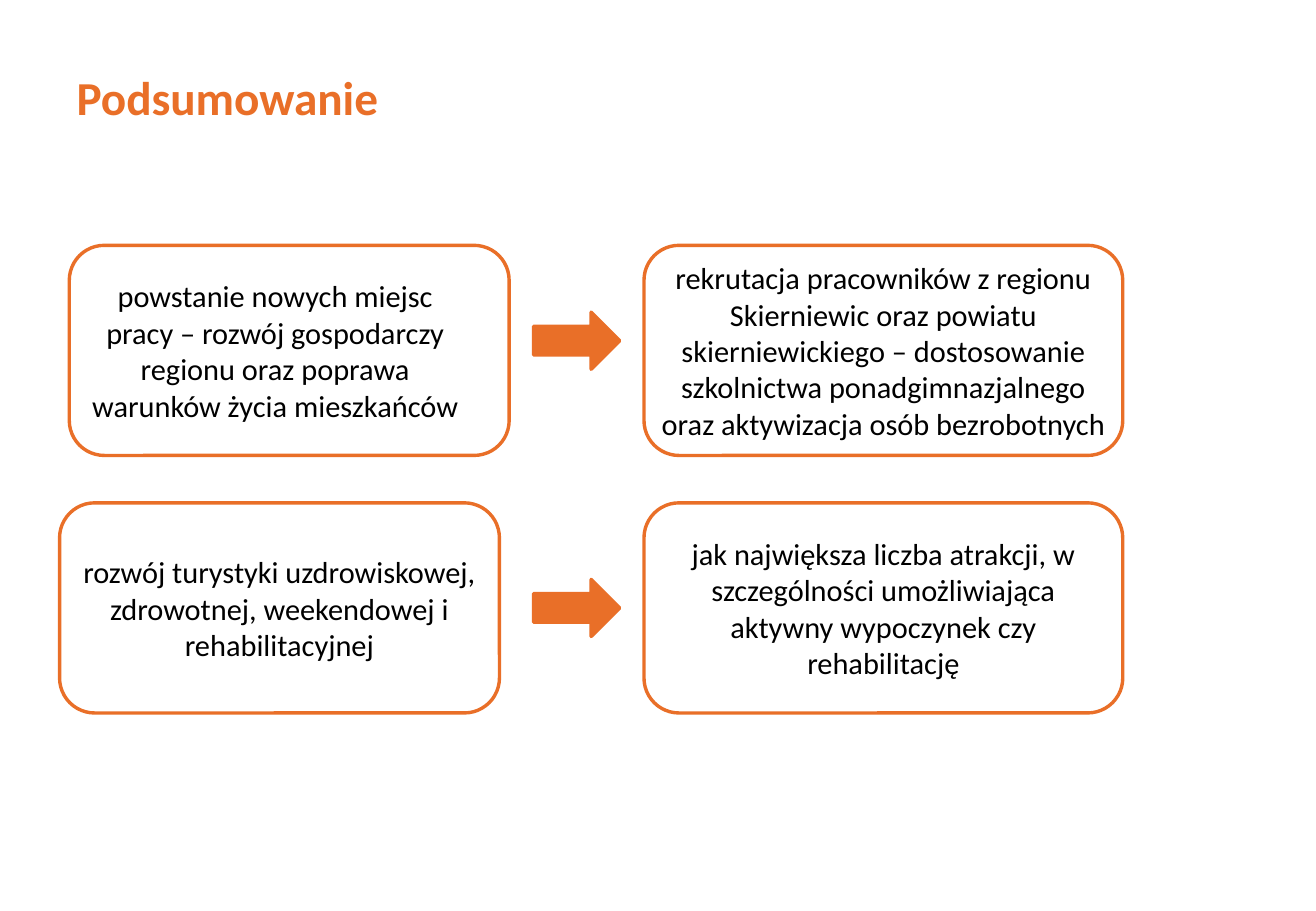
"""Builds the summary slide: two causes, each with an arrow to its effect."""
from pptx import Presentation
from pptx.dml.color import RGBColor
from pptx.enum.shapes import MSO_SHAPE
from pptx.enum.text import MSO_ANCHOR, PP_ALIGN
from pptx.util import Inches, Pt

COLORS = {"accent": "E96F28", "text": "000000"}
TITLE = "Podsumowanie"
FRAME_H = 1.73
EFFECT_FRAME = (5.3, 3.94)
EFFECT_TEXT = (5.34, 3.86)
ARROW = (4.39, 0.71, 0.47)
ROWS = [
    {
        "top": 2.02, "arrow_top": 2.57,
        "cause": ("powstanie nowych miejsc pracy – rozwój gospodarczy regionu "
                  "oraz poprawa warunków życia mieszkańców", 4),
        "cause_frame": (0.57, 3.62), "cause_text": (0.61, 3.31),
        "effect": ("rekrutacja pracowników z regionu Skierniewic oraz powiatu "
                   "skierniewickiego – dostosowanie szkolnictwa ponadgimnazjalnego "
                   "oraz aktywizacja osób bezrobotnych", 5),
    },
    {
        "top": 4.14, "arrow_top": 4.77,
        "cause": ("rozwój turystyki uzdrowiskowej, zdrowotnej, weekendowej "
                  "i rehabilitacyjnej", 3),
        "cause_frame": (0.49, 3.62), "cause_text": (0.53, 3.54),
        "effect": ("jak największa liczba atrakcji, w szczególności umożliwiająca "
                   "aktywny wypoczynek czy rehabilitację", 4),
    },
]
TITLE_FONT = {"name": "Calibri", "size": Pt(28), "bold": True}
BODY_FONT = {"name": "Calibri", "size": Pt(18)}


def color(key):
    return RGBColor.from_string(COLORS[key])


def write(tf, text, fmt, key, align):
    tf.word_wrap = True
    p = tf.paragraphs[0]
    p.alignment = align
    r = p.add_run()
    r.text = text
    for name, value in fmt.items():
        setattr(r.font, name, value)
    r.font.color.rgb = color(key)


def add_outline(s, kind, box, filled=False):
    sp = s.shapes.add_shape(kind, *map(Inches, box))
    sp.shadow.inherit = False
    if filled:
        sp.fill.solid()
        sp.fill.fore_color.rgb = color("accent")
    else:
        sp.fill.background()
    sp.line.color.rgb = color("accent")
    sp.line.width = Pt(2)


def add_statement(s, top, frame, span, statement):
    text, lines = statement
    left, width = frame
    add_outline(s, MSO_SHAPE.ROUNDED_RECTANGLE, (left, top, width, FRAME_H))
    left, width = span
    height = 0.1 + 0.3 * lines
    text_top = top + (FRAME_H - height) / 2
    tb = s.shapes.add_textbox(*map(Inches, (left, text_top, width, height)))
    tb.text_frame.vertical_anchor = MSO_ANCHOR.MIDDLE
    write(tb.text_frame, text, BODY_FONT, "text", PP_ALIGN.CENTER)


def main():
    prs = Presentation()
    prs.slide_width, prs.slide_height = Inches(10.83), Inches(7.5)
    s = prs.slides.add_slide(prs.slide_layouts[5])

    title = s.shapes.title
    title.left, title.top, title.width, title.height = map(Inches, (0.53, 0.36, 9.75, 0.87))
    title.text_frame.vertical_anchor = MSO_ANCHOR.MIDDLE
    write(title.text_frame, TITLE, TITLE_FONT, "accent", PP_ALIGN.LEFT)

    arrow_left, arrow_w, arrow_h = ARROW
    for row in ROWS:
        add_statement(s, row["top"], row["cause_frame"], row["cause_text"], row["cause"])
        add_outline(s, MSO_SHAPE.RIGHT_ARROW,
                    (arrow_left, row["arrow_top"], arrow_w, arrow_h), filled=True)
        add_statement(s, row["top"], EFFECT_FRAME, EFFECT_TEXT, row["effect"])

    prs.save("out.pptx")


if __name__ == "__main__":
    main()
